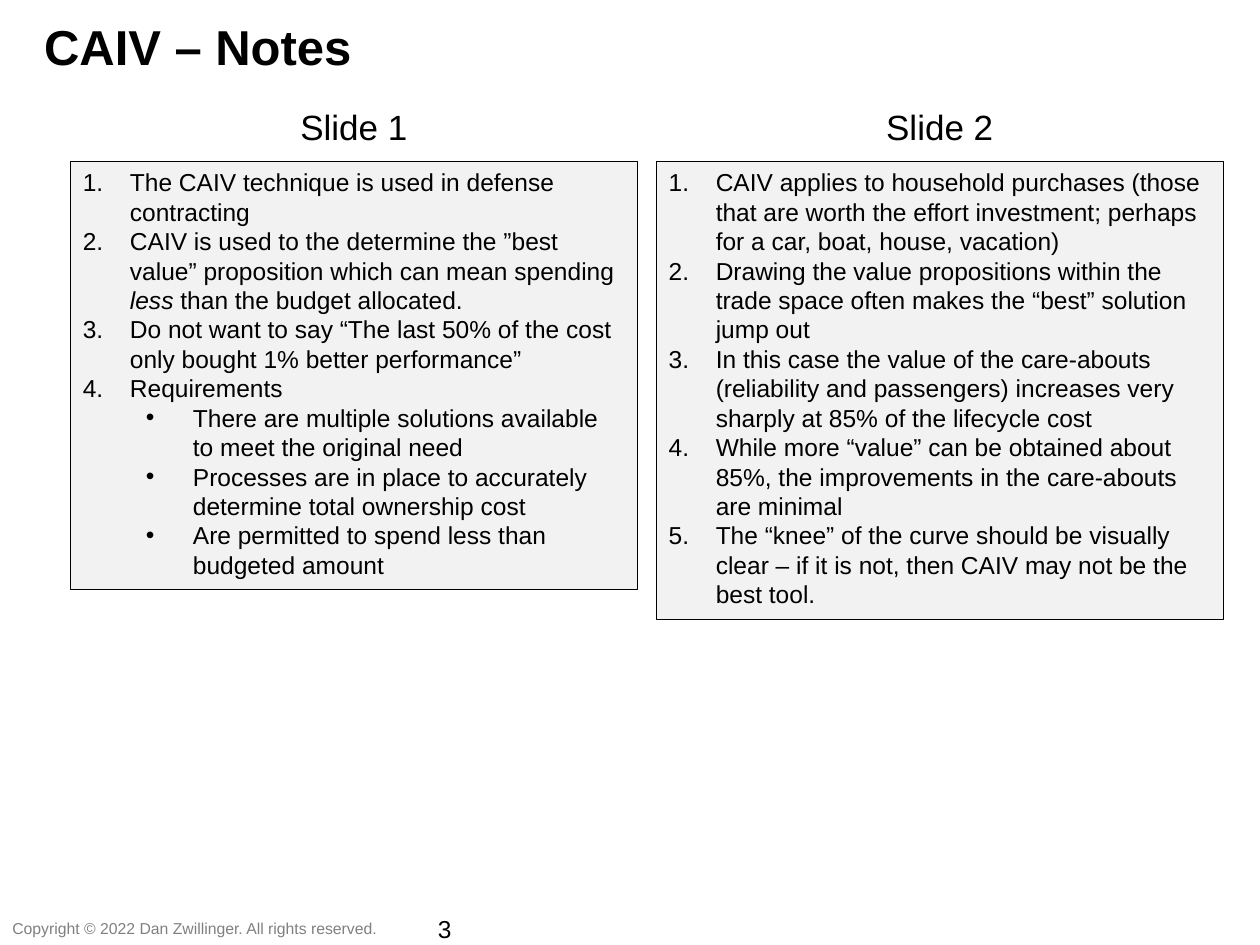
from dataclasses import dataclass

from lxml.etree import SubElement
from pptx import Presentation
from pptx.dml.color import RGBColor
from pptx.enum.shapes import MSO_SHAPE
from pptx.enum.text import MSO_ANCHOR, PP_ALIGN
from pptx.oxml.ns import qn
from pptx.util import Cm, Pt


@dataclass(frozen=True)
class Theme:
    font: str = "Arial"
    ink: RGBColor = RGBColor(0x00, 0x00, 0x00)
    muted: RGBColor = RGBColor(0x80, 0x80, 0x80)
    panel: RGBColor = RGBColor(0xF2, 0xF2, 0xF2)
    title: int = 28
    heading: int = 20
    body: int = 14
    footer: int = 9


class SlideBuilder:
    def __init__(self, page, theme):
        self.page = page
        self.theme = theme

    def style(self, para, size, color=None, bold=False):
        font = para.font
        font.name, font.size, font.bold = self.theme.font, Pt(size), bold
        font.color.rgb = color or self.theme.ink

    def label(self, text, left, top, width, height, size,
              align=PP_ALIGN.LEFT, wrap=True, **look):
        box = self.page.shapes.add_textbox(Cm(left), Cm(top), Cm(width), Cm(height))
        box.text_frame.word_wrap = wrap
        para = box.text_frame.paragraphs[0]
        para.text, para.alignment = text, align
        self.style(para, size, **look)

    def list_item(self, para, text, level):
        """Write one list item; asterisks enclose italic words."""
        para.alignment, para.level = PP_ALIGN.LEFT, level
        # Numbers on the first level, bullets on the second
        props = para._p.get_or_add_pPr()
        props.set("marL", str(Cm(0.95 + 1.27 * level)))
        props.set("indent", str(-Cm(0.95)))
        SubElement(props, qn("a:buFont"), typeface=self.theme.font)
        if level:
            SubElement(props, qn("a:buChar"), char="•")
        else:
            SubElement(props, qn("a:buAutoNum"), type="arabicPeriod")
        self.style(para, self.theme.body)
        for index, part in enumerate(text.split("*")):
            span = para.add_run()
            span.text = part
            if index % 2:
                span.font.italic = True

    def list_panel(self, items, left, top, width, height):
        box = self.page.shapes.add_shape(
            MSO_SHAPE.RECTANGLE, Cm(left), Cm(top), Cm(width), Cm(height))
        box.shadow.inherit = False
        box.fill.solid()
        box.fill.fore_color.rgb = self.theme.panel
        box.line.color.rgb = self.theme.ink
        box.line.width = Pt(0.75)
        frame = box.text_frame
        frame.word_wrap = True
        frame.vertical_anchor = MSO_ANCHOR.TOP
        for index, (level, text) in enumerate(items):
            para = frame.add_paragraph() if index else frame.paragraphs[0]
            self.list_item(para, text, level)


# Each column: heading, panel height, (level, text) items
COLUMNS = [
    ("Slide 1", 8.64, [
        (0, "The CAIV technique is used in defense contracting"),
        (0, "CAIV is used to the determine the ”best value” proposition which "
            "can mean spending *less* than the budget allocated."),
        (0, "Do not want to say “The last 50% of the cost only bought 1% "
            "better performance”"),
        (0, "Requirements"),
        (1, "There are multiple solutions available to meet the original need"),
        (1, "Processes are in place to accurately determine total ownership cost"),
        (1, "Are permitted to spend less than budgeted amount"),
    ]),
    ("Slide 2", 9.24, [
        (0, "CAIV applies to household purchases (those that are worth the effort "
            "investment; perhaps for a car, boat, house, vacation)"),
        (0, "Drawing the value propositions within the trade space often makes "
            "the “best” solution jump out"),
        (0, "In this case the value of the care-abouts (reliability and "
            "passengers) increases very sharply at 85% of the lifecycle cost"),
        (0, "While more “value” can be obtained about 85%, the improvements in "
            "the care-abouts are minimal"),
        (0, "The “knee” of the curve should be visually clear – if it is not, "
            "then CAIV may not be the best tool."),
    ]),
]
COLUMN_LEFT, COLUMN_WIDTH, COLUMN_GAP = 1.42, 11.43, 0.38


def main():
    deck = Presentation()
    deck.slide_width, deck.slide_height = Cm(25.4), Cm(19.05)
    theme = Theme()
    builder = SlideBuilder(deck.slides.add_slide(deck.slide_layouts[6]), theme)

    # Title
    builder.label("CAIV – Notes", 0.64, 0.2, 20, 1.45, theme.title, bold=True)

    # Two columns of lists
    for index, (heading, height, items) in enumerate(COLUMNS):
        left = COLUMN_LEFT + index * (COLUMN_WIDTH + COLUMN_GAP)
        builder.label(heading, left, 2, COLUMN_WIDTH, 1.11, theme.heading,
                      align=PP_ALIGN.CENTER)
        builder.list_panel(items, left, 3.25, COLUMN_WIDTH, height)

    # Footer
    builder.label("Copyright © 2022 Dan Zwillinger. All rights reserved.",
                  0, 18.4, 7.95, 0.64, theme.footer, wrap=False, color=theme.muted)
    builder.label("3", 7.95, 18.31, 1.4, 0.69, theme.body, align=PP_ALIGN.RIGHT)

    deck.save("out.pptx")


if __name__ == "__main__":
    main()
